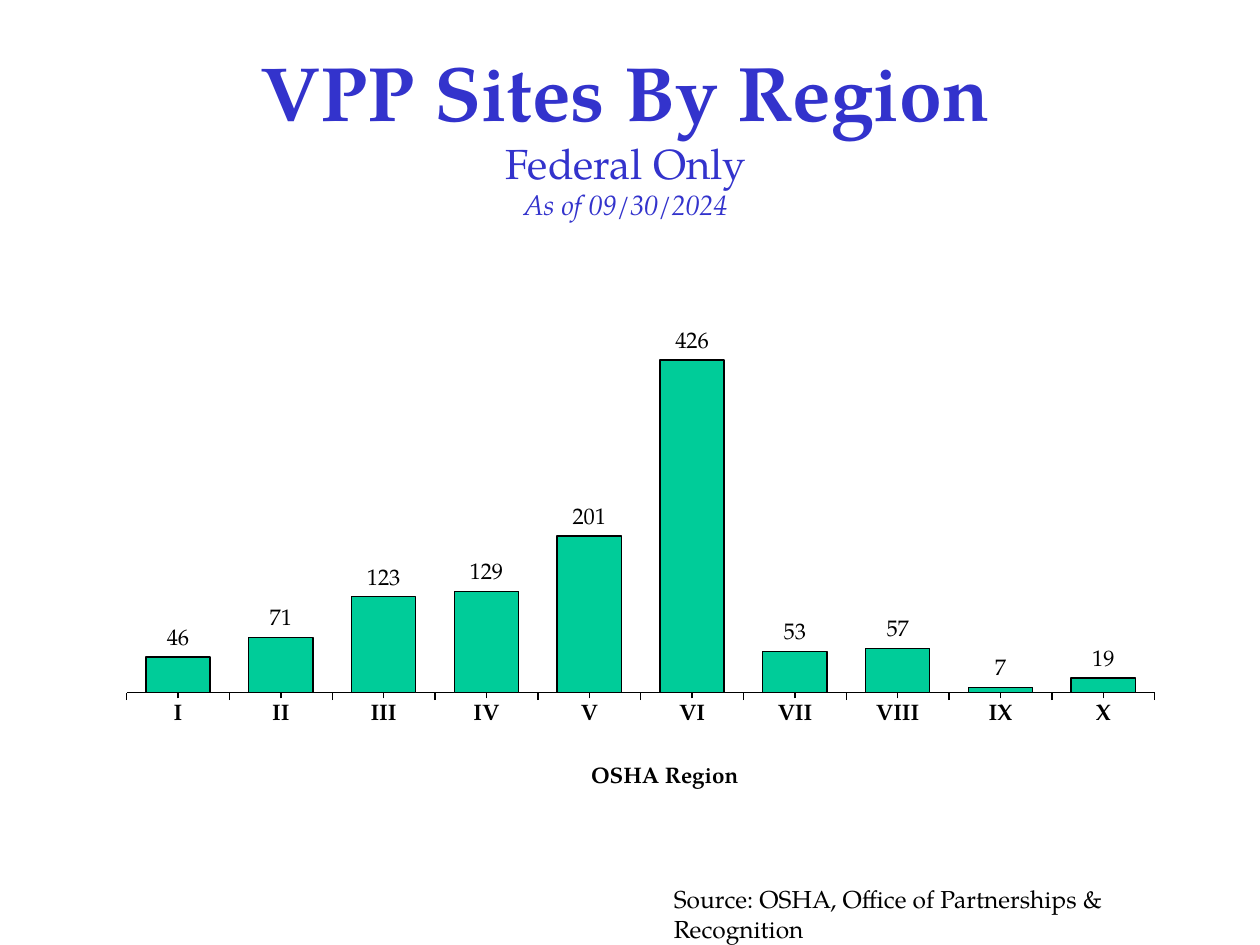
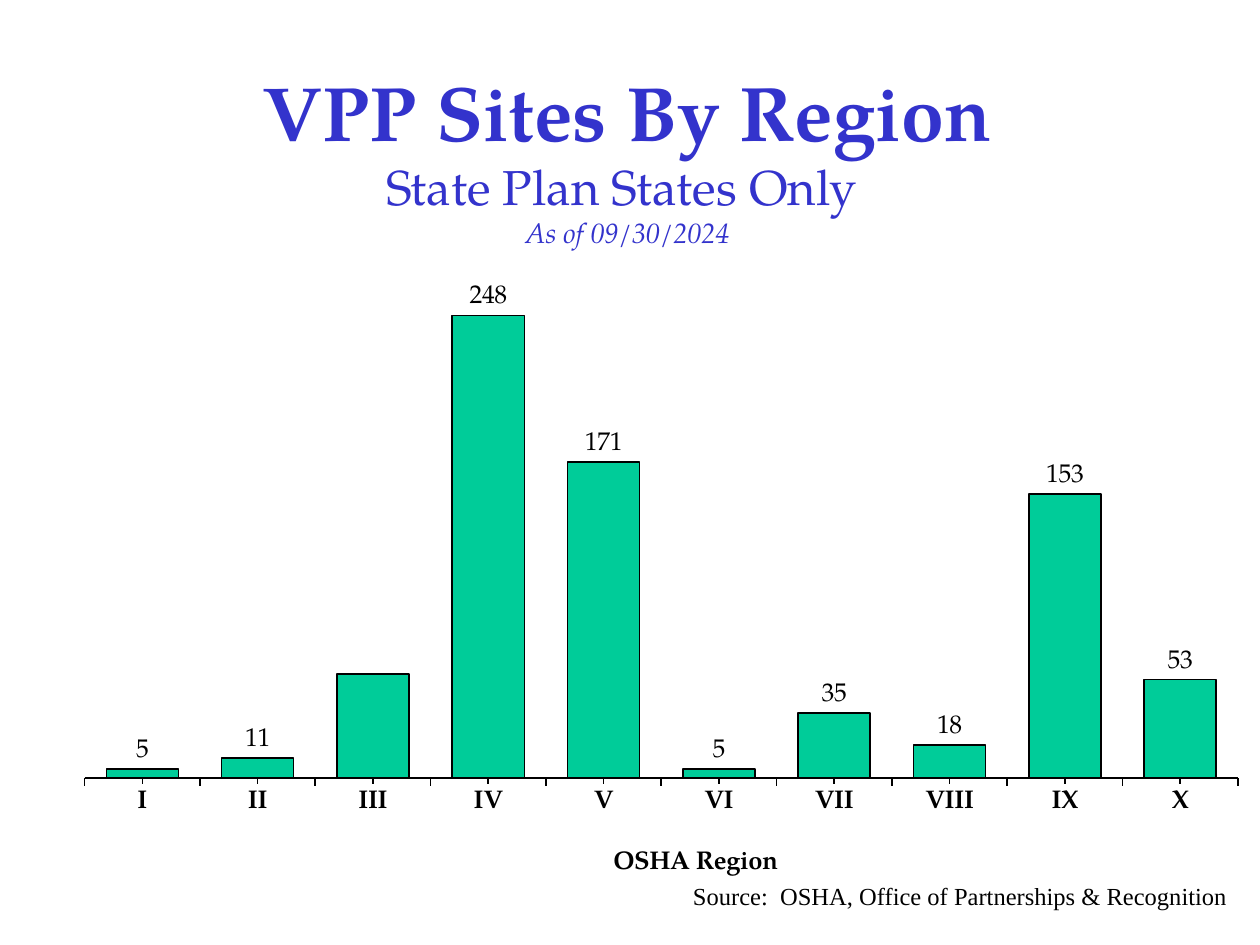
from pptx import Presentation
from pptx.chart.data import CategoryChartData
from pptx.dml.color import RGBColor
from pptx.enum.chart import XL_CHART_TYPE, XL_LABEL_POSITION, XL_TICK_LABEL_POSITION, XL_TICK_MARK
from pptx.enum.text import MSO_ANCHOR, PP_ALIGN
from pptx.oxml import parse_xml
from pptx.oxml.ns import nsdecls, qn
from pptx.util import Inches, Pt

SERIF = "TeX Gyre Pagella"
BLUE, GREEN, BLACK = "3333CC", "00CC99", "000000"
REGIONS = ["I", "II", "III", "IV", "V", "VI", "VII", "VIII", "IX", "X"]


def format_font(font, color, **values):
    font.color.rgb = RGBColor.from_string(color)
    for name, value in values.items():
        setattr(font, name, value)


def set_layout(parent, index, **values):
    for layout in parent.findall(qn("c:layout")):
        parent.remove(layout)
    target = '<c:layoutTarget val="inner"/>' if "w" in values else ""
    modes = "".join(f'<c:{name}Mode val="edge"/>' for name in ("x", "y"))
    numbers = "".join(f'<c:{name} val="{value}"/>' for name, value in values.items())
    parent.insert(index, parse_xml(
        f'<c:layout {nsdecls("c")}><c:manualLayout>{target}{modes}{numbers}</c:manualLayout></c:layout>'))


SLIDES = [
    {
        "title_box": (0.75, 0.43, 8.43, 1.25),
        "subtitle": ("Federal Only", 24),
        "chart_box": (0.75, 2.17, 8.5, 4.5),
        "sites": [46, 71, 123, 130, 201, 426, 53, 57, 7, 19],
        "special_labels": {3: "129"},
        "scale_top": 450,
        "chart_size": 12.8,
        "line_width": 0.8,
        "plot": {"x": 0.03, "y": 0.12, "w": 0.96, "h": 0.62},
        "axis_title": {"x": 0.46, "y": 0.86},
        "source_box": (5.25, 6.97, 4.64, 0.34),
        "source": ("Source: OSHA, Office of Partnerships & Recognition", SERIF),
        "margins": (0.1, 0.05),
    },
    {
        "title_box": (0.73, 0.62, 8.5, 1.25),
        "subtitle": ("State Plan States Only ", 28),
        "chart_box": (0.58, 1.75, 9.25, 5.75),
        "sites": [5, 11, 56, 249, 170, 5, 35, 18, 153, 53],
        "special_labels": {2: "", 3: "248", 4: "171"},
        "scale_top": 300,
        "chart_size": 14.6,
        "line_width": 0.88,
        "plot": {"x": 0.01, "y": 0, "w": 0.99, "h": 0.77},
        "axis_title": {"x": 0.46, "y": 0.86},
        "source_box": (5.5, 6.99, 4.5, 0.22),
        "source": ("Source:  OSHA, Office of Partnerships & Recognition", "Times New Roman"),
        "margins": (0, 0),
    },
]

presentation = Presentation()
presentation.slide_width = Inches(10)
presentation.slide_height = Inches(7.5)

for content in SLIDES:
    slide = presentation.slides.add_slide(presentation.slide_layouts[6])

    chart_data = CategoryChartData()
    chart_data.categories = REGIONS
    chart_data.add_series("Series 1", content["sites"])
    chart = slide.shapes.add_chart(
        XL_CHART_TYPE.COLUMN_CLUSTERED, *map(Inches, content["chart_box"]), chart_data).chart
    chart.has_legend = False
    chart.has_title = False
    text_format = {"name": SERIF, "size": Pt(content["chart_size"])}
    format_font(chart.font, BLACK, bold=True, **text_format)
    plot_area = chart._chartSpace.xpath(".//c:plotArea")[0]
    set_layout(plot_area, 0, **content["plot"])

    plot = chart.plots[0]
    plot.gap_width = 60
    plot.vary_by_categories = False
    series = plot.series[0]
    series.format.fill.solid()
    series.format.fill.fore_color.rgb = RGBColor.from_string(GREEN)
    category_axis = chart.category_axis
    for line in (series.format.line, category_axis.format.line):
        line.color.rgb = RGBColor.from_string(BLACK)
        line.width = Pt(content["line_width"])

    category_axis.major_tick_mark = XL_TICK_MARK.OUTSIDE
    category_axis.minor_tick_mark = XL_TICK_MARK.OUTSIDE
    category_axis.tick_label_position = XL_TICK_LABEL_POSITION.LOW
    axis_title = category_axis.axis_title
    axis_title.text_frame.text = "OSHA Region"
    format_font(axis_title.text_frame.paragraphs[0].runs[0].font, BLACK, bold=True, **text_format)
    set_layout(plot_area.xpath("./c:catAx/c:title")[0], 1, **content["axis_title"])

    value_axis = chart.value_axis
    value_axis.minimum_scale = 0
    value_axis.maximum_scale = content["scale_top"]
    value_axis.has_major_gridlines = False
    value_axis.major_tick_mark = XL_TICK_MARK.NONE
    value_axis.tick_label_position = XL_TICK_LABEL_POSITION.NONE
    value_axis.format.line.fill.background()

    labels = series.data_labels
    labels.show_value = True
    labels.position = XL_LABEL_POSITION.OUTSIDE_END
    format_font(labels.font, BLACK, bold=False, **text_format)
    for index, text in content["special_labels"].items():
        if text:
            label = series.points[index].data_label
            label.text_frame.text = text
            label.position = XL_LABEL_POSITION.OUTSIDE_END
            format_font(label.text_frame.paragraphs[0].runs[0].font, BLACK, bold=False, **text_format)
        else:
            plot_area.xpath(".//c:ser/c:dLbls")[0].insert(0, parse_xml(
                f'<c:dLbl {nsdecls("c")}><c:idx val="{index}"/><c:delete val="1"/></c:dLbl>'))

    title_frame = slide.shapes.add_textbox(*map(Inches, content["title_box"])).text_frame
    title_frame.word_wrap = True
    title_frame.vertical_anchor = MSO_ANCHOR.MIDDLE
    subtitle, subtitle_size = content["subtitle"]
    title_lines = [
        ("VPP Sites By Region", {"size": Pt(44), "bold": True}),
        (subtitle, {"size": Pt(subtitle_size)}),
        ("As of 09/30/2024", {"size": Pt(16), "italic": True}),
    ]
    title_frame.text = "\n".join(text for text, _ in title_lines)
    for paragraph, (_, line_format) in zip(title_frame.paragraphs, title_lines):
        paragraph.alignment = PP_ALIGN.CENTER
        format_font(paragraph.runs[0].font, BLUE, name=SERIF, **line_format)

    source_frame = slide.shapes.add_textbox(*map(Inches, content["source_box"])).text_frame
    source_frame.word_wrap = True
    side, edge = map(Inches, content["margins"])
    source_frame.margin_left = source_frame.margin_right = side
    source_frame.margin_top = source_frame.margin_bottom = edge
    source_text, source_font = content["source"]
    source_frame.text = source_text
    format_font(source_frame.paragraphs[0].runs[0].font, BLACK, name=source_font, size=Pt(14))

presentation.save("out.pptx")
